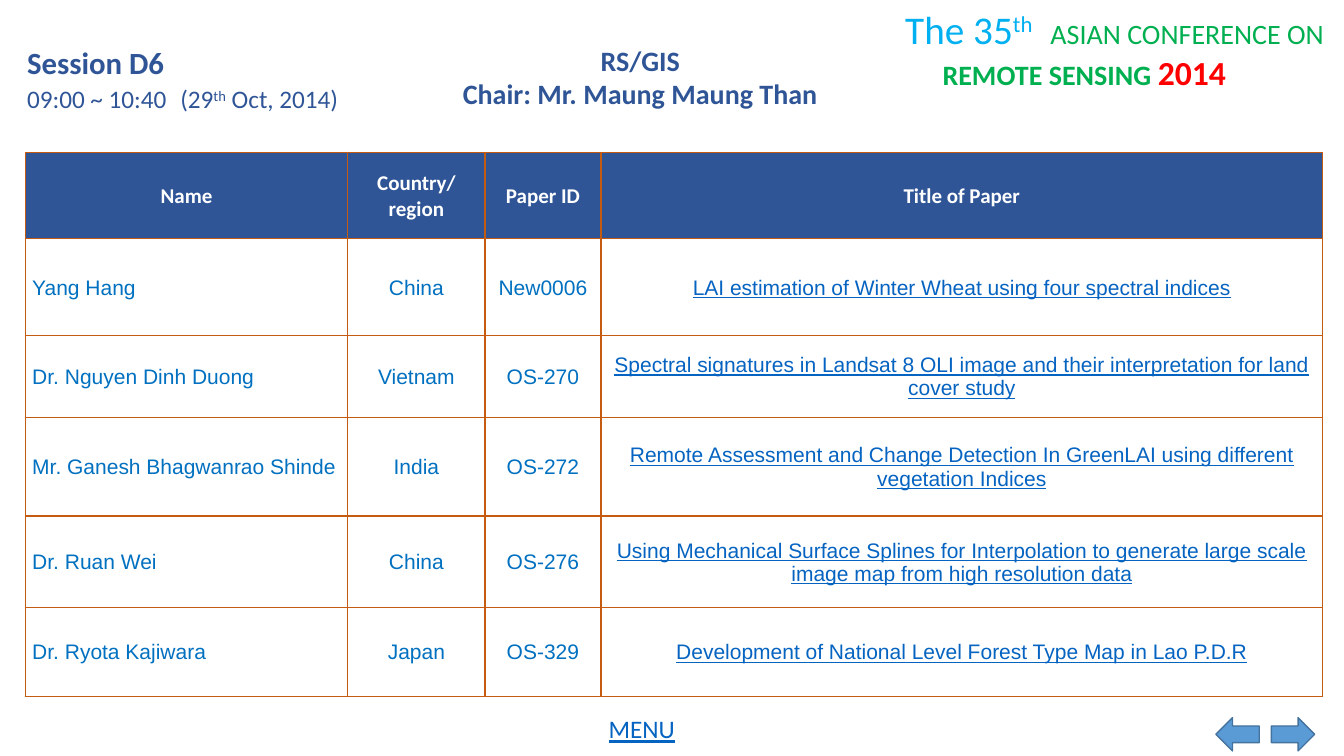
from pptx import Presentation, util as u
from pptx.dml.color import RGBColor
from pptx.enum import shapes, text
from pptx.oxml import xmlchemy
from pptx.oxml.ns import qn
from lxml import etree

PX = 9144
NAVY = RGBColor(0x2F, 0x55, 0x97)
BLUE = RGBColor(0x00, 0x70, 0xC0)
LINK = RGBColor(0x05, 0x63, 0xC1)
SKY = RGBColor(0x00, 0xB0, 0xF0)
GREEN = RGBColor(0x00, 0xB0, 0x50)
RED = RGBColor(0xFF, 0x00, 0x00)
WHITE = RGBColor(0xFF, 0xFF, 0xFF)
RUST = RGBColor(0xC5, 0x5A, 0x11)
ARROW_FILL = RGBColor(0x5B, 0x9B, 0xD5)
ARROW_LINE = RGBColor(0x43, 0x73, 0x9E)

COLUMNS = [320, 136, 115, 716]
ROWS = [86, 96, 81, 98, 91, 88]
HEADERS = ["Name", "Country/\nregion", "Paper ID", "Title of Paper"]
PAPERS = [
    ["Yang Hang", "China", "New0006",
     "LAI estimation of Winter Wheat using four spectral indices"],
    ["Dr. Nguyen Dinh Duong", "Vietnam", "OS-270",
     "Spectral signatures in Landsat 8 OLI image and their interpretation for land cover study"],
    ["Mr. Ganesh Bhagwanrao Shinde", "India", "OS-272",
     "Remote Assessment and Change Detection In GreenLAI using different vegetation Indices"],
    ["Dr. Ruan Wei", "China", "OS-276",
     "Using Mechanical Surface Splines for Interpolation to generate large scale image map "
     "from high resolution data"],
    ["Dr. Ryota Kajiwara", "Japan", "OS-329",
     "Development of National Level Forest Type Map in Lao P.D.R"],
]


def px(*lengths):
    return [length * PX for length in lengths]


def style(font, size, color, bold=False, name="Calibri", underline=False):
    font.size = u.Pt(size)
    font.name = name
    font.bold = bold
    font.underline = underline
    font.color.rgb = color


def add_box(page, box):
    frame = page.shapes.add_textbox(*px(*box)).text_frame
    frame.word_wrap = True
    return frame


def add_spans(para, spans):
    for words, size, color, bold, raised in spans:
        span = para.add_run()
        span.text = words
        style(span.font, size, color, bold)
        if raised:
            span.font._element.set("baseline", "30000")


def add_conference(page, box):
    frame = add_box(page, box)
    first = frame.paragraphs[0]
    add_spans(first, [("The 35", 28, SKY, False, False),
                      ("th", 28, SKY, False, True),
                      ("\tASIAN CONFERENCE ON", 20, GREEN, False, False)])
    stops = etree.SubElement(first._p.get_or_add_pPr(), qn("a:tabLst"))
    etree.SubElement(stops, qn("a:tab"), pos=str(144 * PX), algn="l")
    second = frame.add_paragraph()
    add_spans(second, [("REMOTE SENSING ", 20, GREEN, True, False),
                       ("2014", 24, RED, True, False)])
    second._p.get_or_add_pPr().set("marL", str(37 * PX))


def add_session(page, box):
    left, top, width, height = box
    name = add_box(page, (left, top, width, 47)).paragraphs[0]
    name.text = "Session D6"
    style(name.font, 22, NAVY, True)
    hours = add_box(page, (left, top + 40, width, height - 40)).paragraphs[0]
    hours.text = "09:00 ~ 10:40"
    style(hours.font, 18, NAVY)
    day = add_box(page, (left + 152, top + 40, width, height - 40)).paragraphs[0]
    add_spans(day, [("(29", 18, NAVY, False, False),
                    ("th", 18, NAVY, False, True),
                    (" Oct, 2014)", 18, NAVY, False, False)])


def add_chair(page, box):
    frame = add_box(page, box)
    frame.text = "RS/GIS\nChair: Mr. Maung Maung Than"
    for para in frame.paragraphs:
        para.alignment = text.PP_ALIGN.CENTER
        style(para.font, 20, NAVY, True)
    frame.paragraphs[0]._p.get_or_add_pPr().set("marR", str(33 * PX))


def add_borders(cell):
    properties = cell._tc.get_or_add_tcPr()
    for side in ("lnL", "lnR", "lnT", "lnB"):
        line = etree.SubElement(properties, qn("a:" + side), w=str(u.Pt(1)))
        fill = etree.SubElement(line, qn("a:solidFill"))
        etree.SubElement(fill, qn("a:srgbClr"), val=str(RUST))


def fill_cell(cell, words, row, column):
    header = row == 0
    name = column == 0 and not header
    title = column == len(COLUMNS) - 1 and not header
    cell.text = words
    cell.vertical_anchor = text.MSO_ANCHOR.MIDDLE
    cell.margin_left, cell.margin_right, cell.margin_top, cell.margin_bottom = px(
        7 if name else 1, 1, 1, 0)
    add_borders(cell)
    if header:
        cell.fill.solid()
        cell.fill.fore_color.rgb = NAVY
    else:
        cell.fill.background()
    for para in cell.text_frame.paragraphs:
        para.alignment = text.PP_ALIGN.LEFT if name else text.PP_ALIGN.CENTER
        if header:
            style(para.font, 15, WHITE, True)
        else:
            style(para.font, 15, LINK if title else BLUE, name="Arial", underline=title)


def add_papers(page, box):
    table = page.shapes.add_table(len(ROWS), len(COLUMNS), *px(*box)).table
    table.first_row = table.horz_banding = False
    for column, width in zip(table.columns, px(*COLUMNS)):
        column.width = width
    for row, height in zip(table.rows, px(*ROWS)):
        row.height = height
    for row, entries in enumerate([HEADERS] + PAPERS):
        for column, words in enumerate(entries):
            fill_cell(table.cell(row, column), words, row, column)


def add_navigation(page, box):
    left, top, width, height = box
    frame = add_box(page, (left, top, 121, height))
    frame.vertical_anchor = text.MSO_ANCHOR.MIDDLE
    menu = frame.paragraphs[0]
    menu.text = "MENU"
    menu.alignment = text.PP_ALIGN.CENTER
    menu.line_spacing = 0.9
    style(menu.font, 18, LINK, underline=True)
    kinds = shapes.MSO_SHAPE
    for kind, inset in ((kinds.LEFT_ARROW, 98), (kinds.RIGHT_ARROW, 43)):
        arrow = page.shapes.add_shape(kind, *px(left + width - inset, top + 6, 43, 33))
        arrow.shadow.inherit = False
        arrow.fill.solid()
        arrow.fill.fore_color.rgb = ARROW_FILL
        arrow.line.color.rgb = ARROW_LINE
        arrow.line.width = u.Pt(1)


def main():
    deck = Presentation()
    deck.slide_width, deck.slide_height = px(1333, 750)
    page = deck.slides.add_slide(deck.slide_layouts[6])
    add_conference(page, (888, 0, 445, 98))
    add_papers(page, (25, 151, sum(COLUMNS), sum(ROWS)))
    add_session(page, (17, 38, 256, 80))
    add_chair(page, (389, 38, 525, 77))
    add_navigation(page, (576, 706, 728, 38))
    deck.save("out.pptx")


if __name__ == "__main__":
    main()
